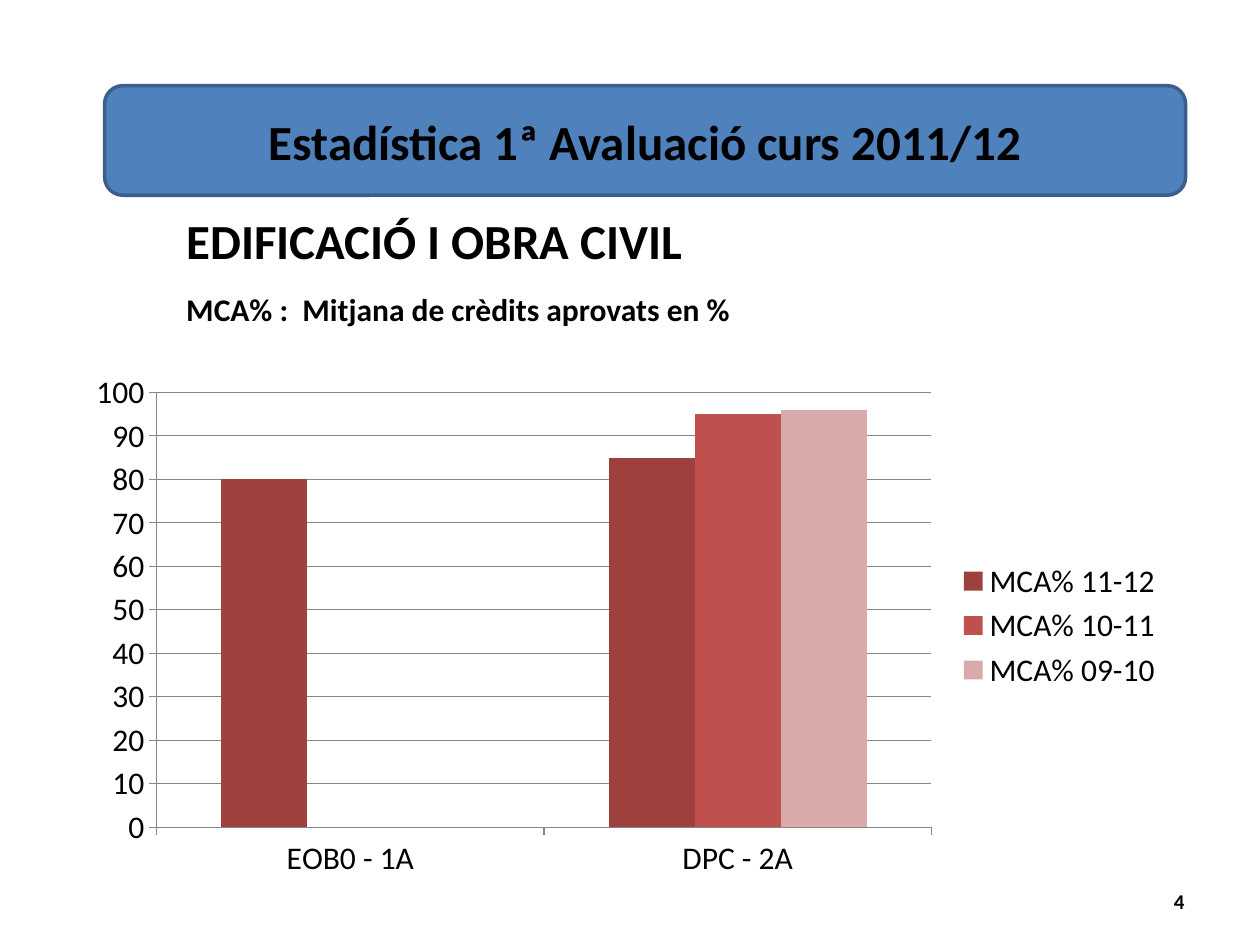
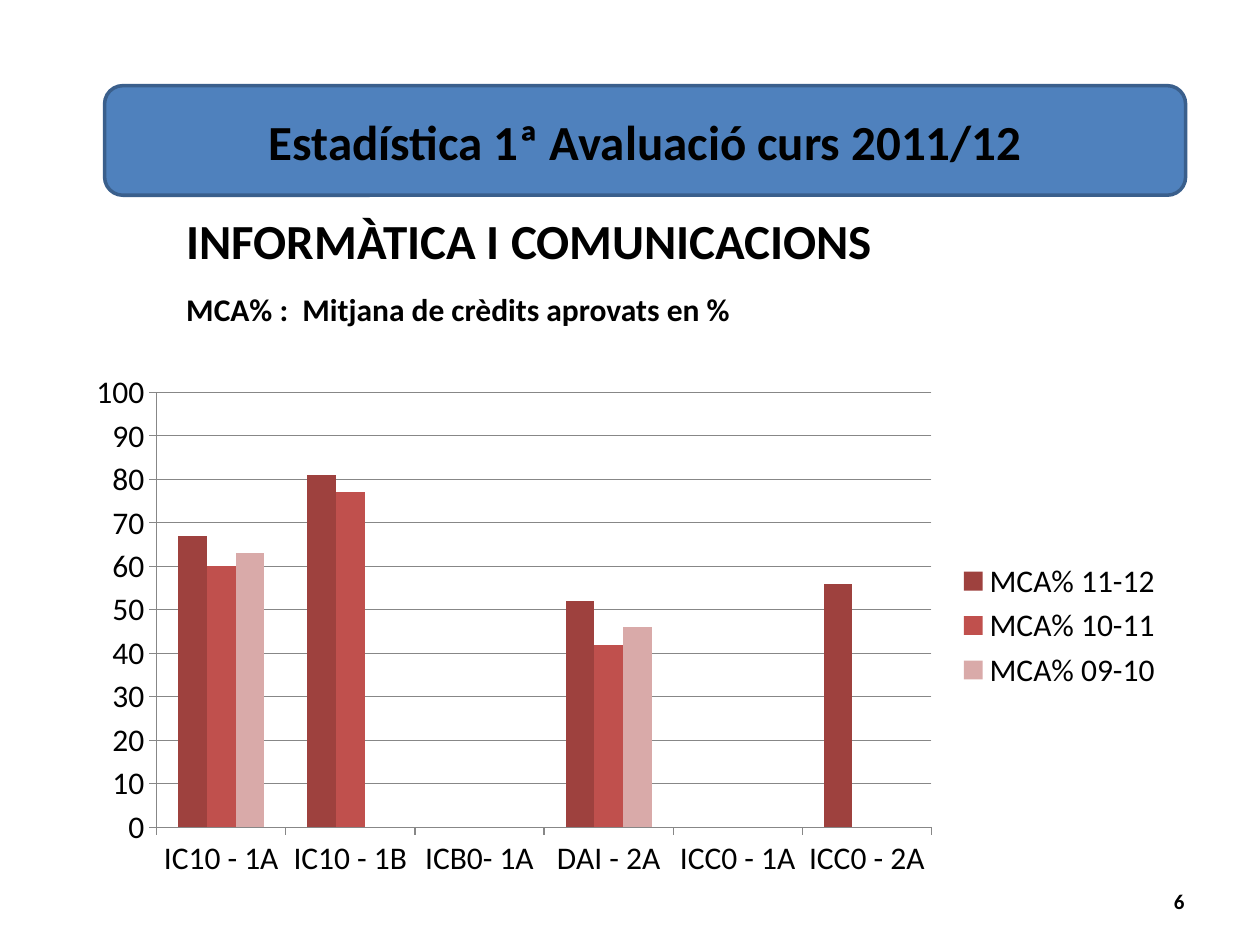
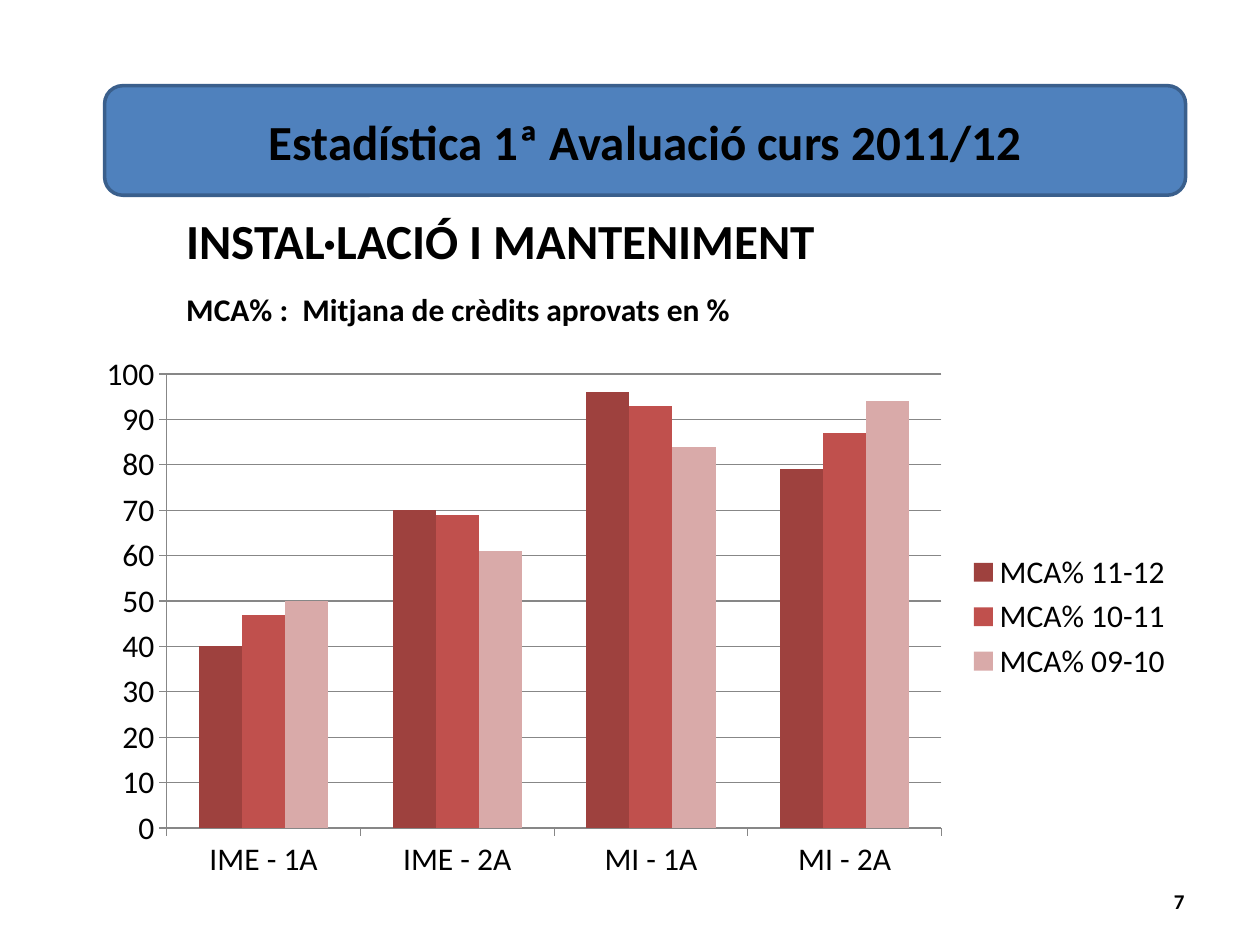
from pptx import Presentation
from pptx.chart.data import CategoryChartData as Data
from pptx.dml.color import RGBColor
from pptx.enum.chart import XL_CHART_TYPE as Kind, XL_LEGEND_POSITION as Side, XL_TICK_MARK as Tick
from pptx.enum.shapes import MSO_SHAPE as Form
from pptx.enum.text import MSO_ANCHOR as Anchor, MSO_AUTO_SIZE as Fit, PP_ALIGN as Align
from pptx.util import Inches, Pt

BLACK = RGBColor(0, 0, 0)
BLUE = RGBColor(0x4F, 0x81, 0xBD)
NAVY = RGBColor(0x3A, 0x5F, 0x8C)
GREY = RGBColor(0x87, 0x87, 0x87)
REDS = [
    RGBColor(0x9E, 0x41, 0x3E),
    RGBColor(0xC0, 0x50, 0x4D),
    RGBColor(0xD9, 0xAA, 0xA9),
]
FONT = "Calibri"

BANNER = "Estadística 1ª Avaluació curs 2011/12"
LEGEND = "MCA% :  Mitjana de crèdits aprovats en %"
YEARS = ["MCA% 11-12", "MCA% 10-11", "MCA% 09-10"]

SLIDES = [
    {
        "page": "4", "title": "EDIFICACIÓ I OBRA CIVIL", "width": 4.19,
        "area": (0.59, 2.88, 8.74, 4.17),
        "rows": [
            ("EOB0 - 1A", 80, None, None),
            ("DPC - 2A", 85, 95, 96),
        ],
    },
    {
        "page": "6", "title": "INFORMÀTICA I COMUNICACIONS", "width": 5.71,
        "area": (0.59, 2.88, 8.74, 4.17),
        "rows": [
            ("IC10 - 1A", 67, 60, 63),
            ("IC10 - 1B", 81, 77, None),
            ("ICB0- 1A", None, None, None),
            ("DAI - 2A", 52, 42, 46),
            ("ICC0 - 1A", None, None, None),
            ("ICC0 - 2A", 56, None, None),
        ],
    },
    {
        "page": "7", "title": "INSTAL·LACIÓ I MANTENIMENT", "width": 5.27,
        "area": (0.67, 2.73, 8.74, 4.33),
        "rows": [
            ("IME - 1A", 40, 47, 50),
            ("IME - 2A", 70, 69, 61),
            ("MI - 1A", 96, 93, 84),
            ("MI - 2A", 79, 87, 94),
        ],
    },
]


def box(*area):
    return [Inches(n) for n in area]


def write(shape, text, size, align=Align.LEFT, anchor=Anchor.MIDDLE, wrap=True):
    frame = shape.text_frame
    frame.word_wrap = wrap
    frame.auto_size = Fit.NONE if wrap else Fit.SHAPE_TO_FIT_TEXT
    frame.vertical_anchor = anchor
    para = frame.paragraphs[0]
    para.alignment = align
    run = para.add_run()
    run.text = text
    font = run.font
    font.name, font.size, font.bold = FONT, Pt(size), True
    font.color.rgb = BLACK


def add_title(slide, text, width):
    title = slide.shapes.title
    title.left, title.top, title.width, title.height = box(1.38, 1.62, width, 0.57)
    write(title, text, 28, anchor=Anchor.TOP, wrap=False)


def add_band(slide):
    band = slide.shapes.add_shape(Form.ROUNDED_RECTANGLE, *box(0.83, 0.68, 8.58, 0.87))
    band.shadow.inherit = False
    band.fill.solid()
    band.fill.fore_color.rgb = BLUE
    band.line.color.rgb = NAVY
    band.line.width = Pt(2)
    write(band, BANNER, 28, Align.CENTER)


def add_bars(slide, area, rows):
    names, *marks = zip(*rows)
    data = Data()
    data.categories = names
    for year, vals in zip(YEARS, marks):
        data.add_series(year, vals)
    chart = slide.shapes.add_chart(Kind.COLUMN_CLUSTERED, *box(*area), data).chart
    chart.has_title = False
    chart.font.name, chart.font.size = FONT, Pt(18)
    chart.font.color.rgb = BLACK
    chart.has_legend = True
    chart.legend.position = Side.RIGHT
    chart.legend.include_in_layout = False

    plot = chart.plots[0]
    plot.vary_by_categories = False
    plot.gap_width = 150
    for bar, red in zip(plot.series, REDS):
        bar.format.fill.solid()
        bar.format.fill.fore_color.rgb = red

    scale = chart.value_axis
    scale.minimum_scale, scale.maximum_scale, scale.major_unit = 0, 100, 10
    scale.has_major_gridlines = True
    for axis in (scale, chart.category_axis):
        axis.major_tick_mark = Tick.OUTSIDE
    for part in (scale, chart.category_axis, scale.major_gridlines):
        part.format.line.color.rgb = GREY
        part.format.line.width = Pt(0.75)


def main():
    deck = Presentation()
    deck.slide_width, deck.slide_height = box(10, 7.5)
    for item in SLIDES:
        slide = deck.slides.add_slide(deck.slide_layouts[5])
        add_title(slide, item["title"], item["width"])
        note = slide.shapes.add_textbox(*box(1.38, 2.25, 4.56, 0.4))
        write(note, LEGEND, 18, anchor=Anchor.TOP, wrap=False)
        page = slide.shapes.add_textbox(*box(7.17, 6.95, 2.33, 0.4))
        write(page, item["page"], 12, Align.RIGHT)
        add_band(slide)
        add_bars(slide, item["area"], item["rows"])
    deck.save("out.pptx")


if __name__ == "__main__":
    main()
